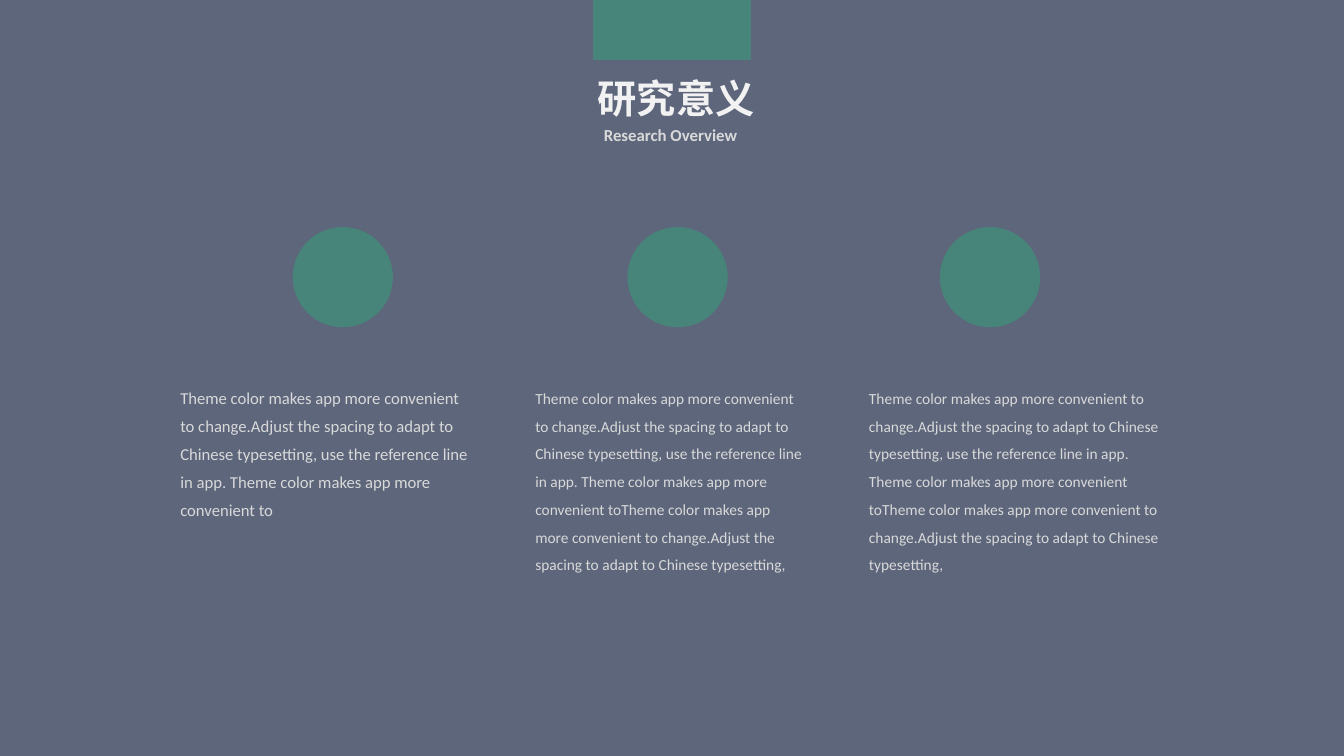
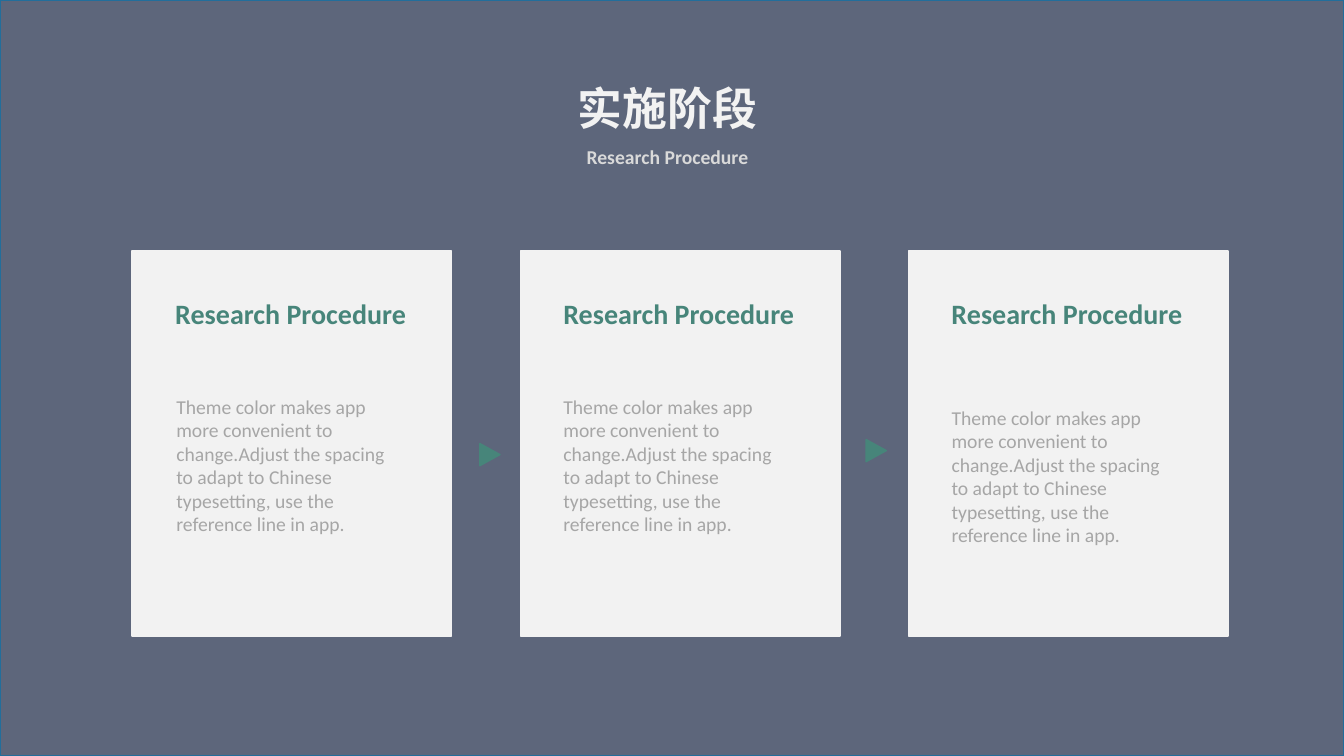
from dataclasses import dataclass

from lxml import etree
from pptx import Presentation
from pptx import util as u
from pptx.dml.color import RGBColor
from pptx.enum import shapes, text
from pptx.oxml.ns import qn

WIDE, HIGH = u.Inches(13.33), u.Inches(7.5)
SHAPE = shapes.MSO_SHAPE


@dataclass(frozen=True)
class Theme:
    navy: str = "192643"
    green: str = "47857A"
    blue: str = "226E9B"
    pale: str = "F2F2F2"
    light: str = "D9D9D9"
    gray: str = "A6A6A6"
    latin: str = "Calibri"
    han: str = "Noto Sans CJK SC"
    veil: int = 70
    head: float = 20
    note: float = 14
    lead: float = 11.9
    small: float = 11


T = Theme()

BASE = ("Theme color makes app more convenient to change.Adjust the spacing "
        "to adapt to Chinese typesetting,")
STEP = BASE + " use the reference line in app."
SHORT = STEP + " Theme color makes app more convenient to"
LONG = SHORT + BASE


def place(x, y, w, h):
    """Turn percent shares of the slide into lengths."""
    return [u.Emu(round(share * side / 100))
            for share, side in zip((x, y, w, h), (WIDE, HIGH) * 2)]


def apply(item, style):
    for name, value in style.items():
        setattr(item, name, value)


# Shapes
def block(slide, kind, area, fill, line=None, turn=0):
    shape = slide.shapes.add_shape(kind, *place(*area))
    shape.shadow.inherit = False
    shape.rotation = turn
    shape.fill.solid()
    shape.fill.fore_color.rgb = RGBColor.from_string(fill)
    if line:
        shape.line.color.rgb = RGBColor.from_string(line)
        shape.line.width = u.Pt(1)
    else:
        shape.line.fill.background()
    return shape


def cover(slide, line=None):
    """Lay the see-through navy veil over the slide."""
    veil = block(slide, SHAPE.RECTANGLE, (0, 0, 100, 100), T.navy, line)
    color = veil.fill._xPr.find(".//" + qn("a:srgbClr"))
    etree.SubElement(color, qn("a:alpha"), val=str(T.veil * 1000))


# Text
def write(slide, area, words, size, color, face=T.latin, bold=False,
          wrap=False, space=None):
    frame = slide.shapes.add_textbox(*place(*area)).text_frame
    fit = text.MSO_AUTO_SIZE
    apply(frame, {
        "word_wrap": wrap,
        "auto_size": fit.NONE if wrap else fit.SHAPE_TO_FIT_TEXT,
        "vertical_anchor": text.MSO_ANCHOR.MIDDLE if wrap
        else text.MSO_ANCHOR.TOP,
    })
    para = frame.paragraphs[0]
    para.line_spacing = space
    run = para.add_run()
    run.text = words
    apply(run.font, {"name": face, "size": u.Pt(size), "bold": bold})
    run.font.color.rgb = RGBColor.from_string(color)
    if face == T.han:
        latin = run.font._element.find(qn("a:latin"))
        latin.addnext(etree.Element(qn("a:ea"), typeface=face))


def title(slide, main, area, size, sub, below, small):
    write(slide, area, main, size, T.pale, T.han, bold=True)
    write(slide, below, sub, small, T.light, bold=True)


# Slides
def meaning(slide):
    cover(slide)
    block(slide, SHAPE.RECTANGLE, (44.19, 0, 11.63, 7.87), T.green, T.green)
    title(slide, "研究意义", (43.74, 9.2, 13.28, 7.6), 28,
          "Research Overview", (44.19, 15.87, 11.55, 4), 12)
    for x in (21.83, 46.74, 69.99):
        block(slide, SHAPE.OVAL, (x, 30.13, 7.35, 13.07), T.green, T.green)
    for x, y, w, words, size, space in (
            (12.68, 49.07, 23.18, SHORT, T.lead, 1.4),
            (39.09, 52.67, 21.61, LONG, T.small, 1.5),
            (63.92, 52.67, 23.18, LONG, T.small, 1.5)):
        write(slide, (x, y, w, 20.8), words, size, T.light,
              wrap=True, space=space)


def stages(slide):
    cover(slide, T.blue)
    title(slide, "实施阶段", (42.24, 10, 15, 8.53), 32,
          "Research Procedure", (42.91, 18.53, 13.65, 4.53), 14)
    # Cards: inset and top of each body vary a little
    for col, (inset, top) in enumerate(
            ((2.55, 48.27), (2.47, 48.27), (2.47, 49.73))):
        x = 9.83 + col * 28.88
        block(slide, SHAPE.RECTANGLE, (x, 33.2, 23.78, 50.93), T.pale, T.pale)
        write(slide, (x + 2.47, 38.6, 18.83, 5.87), "Research Procedure",
              T.head, T.green, bold=True)
        write(slide, (x + inset, top, 17.7, 26.53), STEP, T.note, T.gray,
              wrap=True)
    # Pointers between the cards
    for x, y in ((35.63, 58.8), (64.37, 58.27)):
        block(slide, SHAPE.ISOSCELES_TRIANGLE, (x, y, 1.65, 2.67),
              T.green, T.green, turn=90)


def main():
    deck = Presentation()
    apply(deck, {"slide_width": WIDE, "slide_height": HIGH})
    for build in (meaning, stages):
        build(deck.slides.add_slide(deck.slide_layouts[6]))
    deck.save("out.pptx")


if __name__ == "__main__":
    main()
